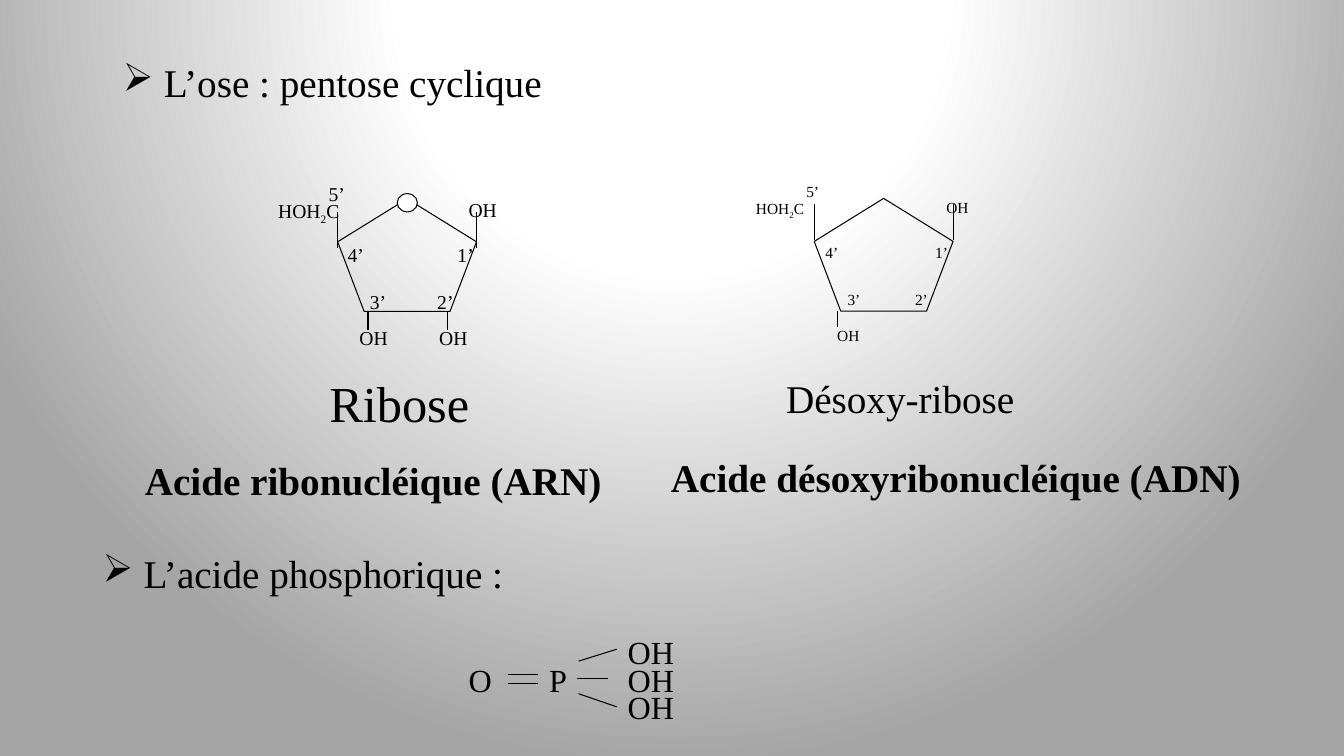
"""Builds the slide on the sugars and phosphoric acid of nucleic acids."""
import pptx
import pptx.util
import pptx.dml.color
import pptx.enum.shapes
import pptx.enum.text
import pptx.oxml
import pptx.oxml.ns
import lxml.etree

Cm, Pt = pptx.util.Cm, pptx.util.Pt
BLACK = pptx.dml.color.RGBColor(0, 0, 0)
WHITE = pptx.dml.color.RGBColor(255, 255, 255)
GREY = pptx.dml.color.RGBColor(0xA5, 0xA5, 0xA5)
FACE = "Times New Roman"
THIN, WIDE = (0.25, 0.13), (0.28, 0.15)
JUST = pptx.enum.text.PP_ALIGN.JUSTIFY
KIND = pptx.enum.shapes.MSO_SHAPE
STOPS = [(0, WHITE), (35, WHITE), (100, GREY)]

HEADS = [
    ("L’ose : pentose cyclique", 2.82, 1.32, 11.48),
    ("L’acide phosphorique :", 2.31, 13.7, 11.02),
]
ACIDS = [
    ("Acide ribonucléique (ARN)", 3.4, 10.77, 12.14, None),
    ("Acide désoxyribonucléique (ADN)", 16.66, 10.69, 15.04, JUST),
]
RING = (3.5, 2.84)
MARKS = [
    ("OH", 3.05, -0.15), ("1’", 2.77, 0.97), ("2’", 2.26, 2.16),
    ("3’", 0.56, 2.16), ("4’", 0, 0.97), ("5’", -0.48, -0.56),
    ("HOH|2|C", -1.75, -0.12), ("OH", 0.3, 3.07),
]
RIBOSE = dict(
    left=8.51, top=5.01, size=14, high=0.86, pad=THIN,
    wide={"OH": 1.24, "HOH|2|C": 2.1},
    marks=MARKS + [("OH", 2.31, 3.07)],
    arms=(1.24, 0.33), feet=[0.76, 2.77], foot=3.3, line=1,
    name=("Ribose", 8.05, 9.25, 4.09, 1.8, 36))
DESOXY = dict(
    left=20.52, top=5, size=11, high=0.76, pad=WIDE,
    wide={"OH": 1.14, "HOH|2|C": 1.83},
    marks=MARKS,
    arms=(1.04, 0.15), feet=[0.58], foot=3.25, line=0.75,
    name=("Désoxy-ribose", 19.53, 9.28, 6.4, 1.5, 28))
ATOMS = [("O", 11.56, 16.51, 1.09), ("P", 13.59, 16.51, 0.97)]
ATOMS += [("OH", 15.57, 15.81 + 0.69 * i, 1.7) for i in range(3)]
BONDS = [
    (12.8, 16.99, 13.56, 16.99), (12.8, 17.22, 13.56, 17.22),
    (14.55, 17.09, 15.32, 17.09), (14.58, 17.48, 15.54, 17.81),
    (14.58, 16.66, 15.54, 16.36),
]


def write(shapes, text, left, top, wide, high, size, pad=THIN,
          bold=False, space=None, align=None):
    box = shapes.add_textbox(Cm(left), Cm(top), Cm(wide), Cm(high))
    frame = box.text_frame
    frame.word_wrap = False
    frame.auto_size = pptx.enum.text.MSO_AUTO_SIZE.SHAPE_TO_FIT_TEXT
    frame.margin_left = frame.margin_right = Cm(pad[0])
    frame.margin_top = frame.margin_bottom = Cm(pad[1])
    para = frame.paragraphs[0]
    para.alignment, para.line_spacing = align, space
    font = para.font
    font.name, font.size, font.bold = FACE, Pt(size), bold
    font.color.rgb = BLACK
    for i, part in enumerate(text.split("|")):
        run = para.add_run()
        run.text = part
        if i % 2:
            run._r.get_or_add_rPr().set("baseline", "-25000")
    return para


def bullet(para):
    props = para._p.get_or_add_pPr()
    name = pptx.oxml.ns.qn
    face = lxml.etree.Element(name("a:buFont"), typeface="Wingdings",
                              pitchFamily="2", charset="2")
    mark = lxml.etree.Element(name("a:buChar"), char="Ø")
    props.insert(0, face)
    props.insert(1, mark)


def bond(shapes, x1, y1, x2, y2, width=0.75):
    line = shapes.add_connector(pptx.enum.shapes.MSO_CONNECTOR.STRAIGHT,
                                Cm(x1), Cm(y1), Cm(x2), Cm(y2))
    line.line.color.rgb = BLACK
    line.line.width = Pt(width)
    props = line._element.spPr
    lxml.etree.SubElement(props, pptx.oxml.ns.qn("a:effectLst"))


def outline(shapes, kind, left, top, wide, high):
    shape = shapes.add_shape(kind, Cm(left), Cm(top), Cm(wide), Cm(high))
    shape.shadow.inherit = False
    shape.line.color.rgb = BLACK
    shape.line.width = Pt(0.75)
    return shape


def sugar(shapes, data):
    left, top = data["left"], data["top"]
    ring = outline(shapes, KIND.REGULAR_PENTAGON, left, top, *RING)
    ring.fill.background()
    low, tip = data["arms"]
    for x in (0, RING[0]):
        bond(shapes, left + x, top + low, left + x, top + tip)
    for x in data["feet"]:
        bond(shapes, left + x, top + RING[1], left + x,
             top + data["foot"], data["line"])
    if data is RIBOSE:
        atom = outline(shapes, KIND.OVAL, left + 1.5, top - 0.13, 0.51, 0.46)
        atom.fill.solid()
        atom.fill.fore_color.rgb = WHITE
    for text, x, y in data["marks"]:
        write(shapes, text, left + x, top + y, data["wide"].get(text, 0.95),
              data["high"], data["size"], data["pad"])
    write(shapes, *data["name"], data["pad"])


def backdrop(slide):
    stops = "".join(
        f'<a:gs pos="{pos * 1000}"><a:srgbClr val="{tone}"/></a:gs>'
        for pos, tone in STOPS)
    back = pptx.oxml.parse_xml(
        f'<p:bg {pptx.oxml.ns.nsdecls("p", "a")}><p:bgPr>'
        f'<a:gradFill rotWithShape="1"><a:gsLst>{stops}</a:gsLst>'
        '<a:path path="circle"><a:fillToRect l="50000" t="-80000" '
        'r="50000" b="180000"/></a:path></a:gradFill>'
        '<a:effectLst/></p:bgPr></p:bg>')
    slide._element.cSld.insert(0, back)


def main():
    deck = pptx.Presentation()
    deck.slide_width, deck.slide_height = Cm(33.87), Cm(19.05)
    slide = deck.slides.add_slide(deck.slide_layouts[6])
    backdrop(slide)
    shapes = slide.shapes
    for text, left, top, wide in HEADS:
        bullet(write(shapes, " " + text, left, top, wide, 1.5, 28, WIDE))
    sugar(shapes.add_group_shape().shapes, RIBOSE)
    sugar(shapes, DESOXY)
    acid = shapes.add_group_shape().shapes
    for text, left, top, wide in ATOMS:
        write(acid, text, left, top, wide, 1.24, 23)
    for ends in BONDS:
        bond(acid, *ends)
    for text, left, top, wide, align in ACIDS:
        write(shapes, text, left, top, wide, 2.06, 28,
              bold=True, space=1.5, align=align)
    deck.save("out.pptx")


if __name__ == "__main__":
    main()
